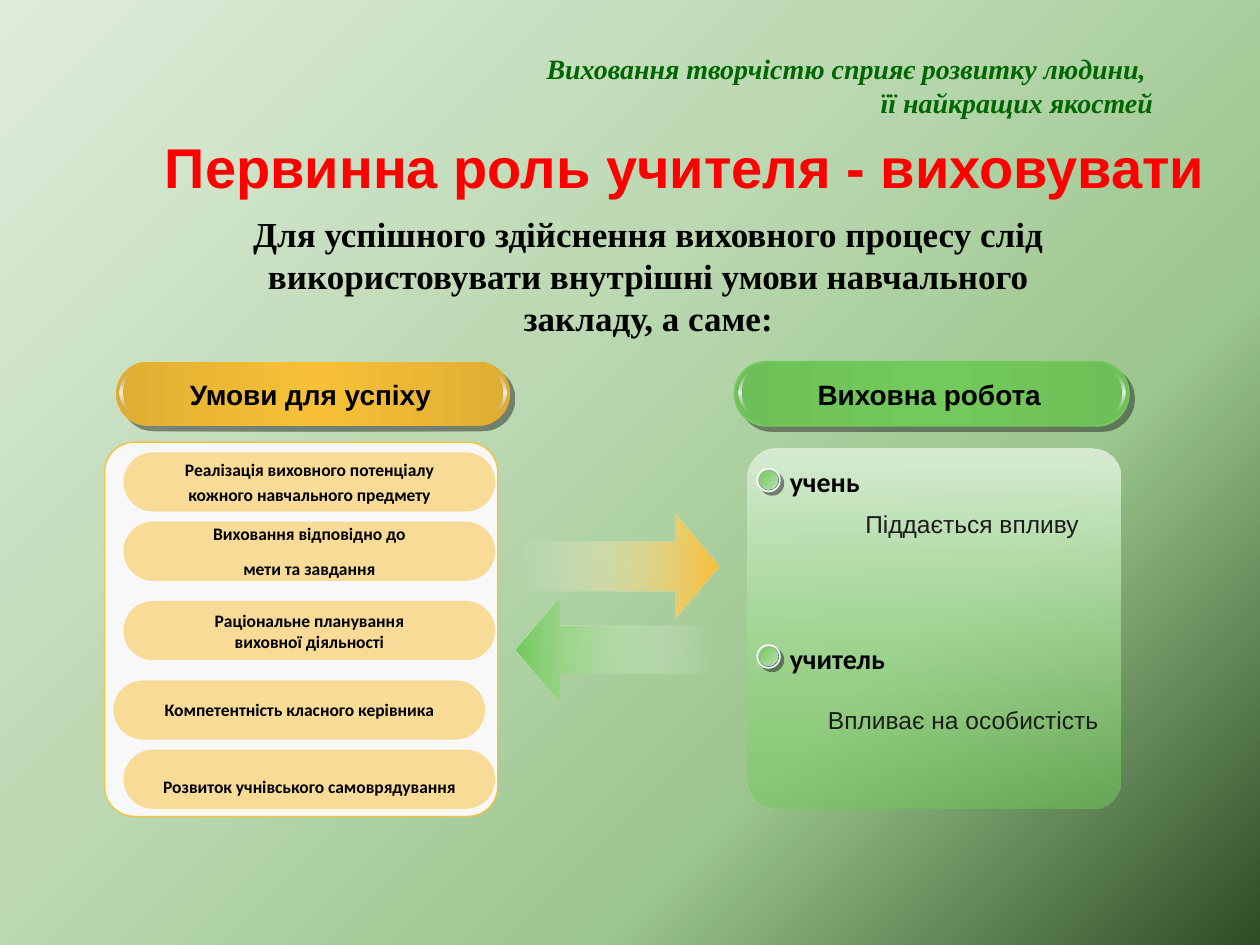
import pptx
import pptx.util
import pptx.dml.color
import pptx.enum.shapes
import pptx.enum.text
import pptx.oxml.ns
from lxml import etree

Inches, Pt = pptx.util.Inches, pptx.util.Pt
RGB = pptx.dml.color.RGBColor
SHAPE = pptx.enum.shapes.MSO_SHAPE
ALIGN = pptx.enum.text.PP_ALIGN
ANCHOR = pptx.enum.text.MSO_ANCHOR
qn = pptx.oxml.ns.qn

BLACK, WHITE = RGB(0, 0, 0), RGB(255, 255, 255)
RED, DARK_GREEN = RGB(0xFF, 0, 0), RGB(0, 0x66, 0)
GOLD, DARK_GOLD = RGB(0xF7, 0xC0, 0x37), RGB(0xDF, 0xAE, 0x32)
GREEN, DEEP_GREEN = RGB(0x73, 0xC9, 0x5B), RGB(0x6D, 0xBF, 0x57)
PALE_GREEN, SOFT_GREEN = RGB(0xD8, 0xEC, 0xD4), RGB(0xB7, 0xDF, 0xB0)
OFF_WHITE, INK = RGB(0xF8, 0xF8, 0xF8), RGB(0x1C, 0x1C, 0x1C)
SILVER, SHADOW = RGB(0xB6, 0xB6, 0xB6), RGB(0x29, 0x29, 0x29)
RIM_LIGHT, RIM_DARK = RGB(0xDD, 0xDD, 0xE1), RGB(0x22, 0x38, 0x64)
BACKGROUND = [(0, RGB(0xDE, 0xEC, 0xD9)), (40, RGB(0xBC, 0xD9, 0xB3)),
              (70, RGB(0x9B, 0xC6, 0x8D)), (100, RGB(0x2E, 0x4C, 0x25))]
GLOSS = [(0, SILVER, 0), (50, WHITE, 84), (100, SILVER, 0)]

# Content
MOTTO = ["Виховання творчістю сприяє розвитку людини, ", "її найкращих якостей"]
TITLE = "Первинна роль учителя - виховувати"
LEAD = ("Для успішного здійснення виховного процесу слід "
        "використовувати внутрішні умови навчального закладу, а саме:")
# heading, left edge, edge colour, middle colour, outline
HEADINGS = [("Умови для успіху", 0.92, DARK_GOLD, GOLD, None),
            ("Виховна робота", 5.83, DEEP_GREEN, GREEN, GREEN)]
# lines, left, top, gap between lines (pt), text drop (pt)
CONDITIONS = [
    (["Реалізація виховного потенціалу", "кожного навчального предмету"], 0.98, 3.59, 2, 0),
    (["Виховання відповідно до", "мети та завдання"], 0.98, 4.14, 8, 0),
    (["Раціональне планування", "виховної діяльності"], 0.98, 4.77, 0, 0),
    (["Компетентність класного керівника"], 0.9, 5.4, 0, 0),
    (["Розвиток учнівського самоврядування"], 0.98, 5.95, 0, 4)]
# role, top, note, note box
ROLES = [("учень", 3.64, "Піддається впливу", (6.34, 3.99, 2.75, 0.33)),
         ("учитель", 5.04, "Впливає на особистість", (6.27, 5.55, 2.75, 0.33))]

HEADING_TOP, HEADING_W, HEADING_H = 2.87, 3.13, 0.51
MOON_W, MOON_H, MOON_INSET = 0.14, 0.35, 0.03
PILL_W, PILL_H = 2.95, 0.47
BULLET_LEFT, BULLET, BULLET_RIM = 6.01, 0.18, 0.015

prs = pptx.Presentation()
prs.slide_width, prs.slide_height = Inches(10), Inches(7.5)
slide = prs.slides.add_slide(prs.slide_layouts[6])


def add_color(parent, color, alpha=100):
    node = etree.SubElement(parent, qn("a:srgbClr"), val=str(color))
    if alpha < 100:
        etree.SubElement(node, qn("a:alpha"), val=str(alpha * 1000))


def paint_gradient(fill, owner, stops, angle):
    fill.gradient()
    gradient = owner.find(".//" + qn("a:gradFill"))
    for child in list(gradient):
        gradient.remove(child)
    stop_list = etree.SubElement(gradient, qn("a:gsLst"))
    for position, *color in stops:
        add_color(etree.SubElement(stop_list, qn("a:gs"), pos=str(position * 1000)), *color)
    etree.SubElement(gradient, qn("a:lin"), ang=str(angle * 60000), scaled="0")


def add_shape(kind, box, fill, angle=0, adjust=(), line=None, shadow=None):
    """fill: a colour, or a list of gradient stops; line: (colour, pt); shadow: (colour, pt)."""
    shape = slide.shapes.add_shape(kind, *map(Inches, box))
    for i, value in enumerate(adjust):
        shape.adjustments[i] = value
    if isinstance(fill, list):
        paint_gradient(shape.fill, shape._element.spPr, fill, angle)
    else:
        shape.fill.solid()
        shape.fill.fore_color.rgb = fill
    if line:
        shape.line.color.rgb, shape.line.width = line[0], Pt(line[1])
    else:
        shape.line.fill.background()
    shape.shadow.inherit = False
    if shadow:
        effects = shape._element.spPr.find(qn("a:effectLst"))
        cast = etree.SubElement(effects, qn("a:outerShdw"), blurRad="0", dist=str(Pt(shadow[1])),
                                dir="2700000", algn="ctr", rotWithShape="0")
        add_color(cast, shadow[0], 50)
    return shape


def write(frame, lines, size, font, color=BLACK, align=ALIGN.CENTER,
          bold=True, italic=False, gap=0):
    for i, line in enumerate(lines):
        paragraph = frame.paragraphs[0] if i == 0 else frame.add_paragraph()
        paragraph.alignment = align
        if i and gap:
            paragraph.space_before = Pt(gap)
        run = paragraph.add_run()
        run.text = line
        run.font.size, run.font.name = Pt(size), font
        run.font.bold, run.font.italic = bold, italic
        run.font.color.rgb = color


def add_text(box, lines, size, font, **style):
    frame = slide.shapes.add_textbox(*map(Inches, box)).text_frame
    frame.word_wrap = True
    write(frame, lines, size, font, **style)


# Background and top texts
paint_gradient(slide.background.fill, slide._element, BACKGROUND, 45)
add_text((3.58, 0.36, 5.67, 0.64), MOTTO, 16, "Times New Roman",
         color=DARK_GREEN, align=ALIGN.RIGHT, italic=True)
add_text((1.21, 1, 8.74, 0.64), [TITLE], 32, "Arial", color=RED, align=ALIGN.LEFT)
add_text((1.85, 1.64, 6.59, 1.11), [LEAD], 20, "Times New Roman")

# Panels
add_shape(SHAPE.ROUNDED_RECTANGLE, (5.93, 3.56, 2.96, 2.86),
          [(0, PALE_GREEN), (100, GREEN, 50)], 90, [0.08])
add_shape(SHAPE.ROUNDED_RECTANGLE, (0.83, 3.51, 3.12, 2.97), OFF_WHITE,
          adjust=[0.08], line=(GOLD, 0.75))

# Glossy headings
for heading, left, edge, middle, outline in HEADINGS:
    add_shape(SHAPE.ROUNDED_RECTANGLE, (left, HEADING_TOP, HEADING_W, HEADING_H),
              [(0, edge), (50, middle), (100, edge)], adjust=[0.5],
              line=outline and (outline, 1), shadow=(SHADOW, 4.2))
    far_side = HEADING_W - MOON_W - MOON_INSET
    for offset, flipped in ((far_side, True), (MOON_INSET, False)):
        moon = add_shape(SHAPE.MOON, (left + offset, HEADING_TOP + 0.07, MOON_W, MOON_H),
                         GLOSS, 90, [0.22])
        if flipped:
            moon._element.spPr.find(qn("a:xfrm")).set("flipH", "1")
    add_text((left + 0.32, HEADING_TOP + 0.08, 2.45, 0.37), [heading], 16, "Arial")

# Arrows between the panels
add_shape(SHAPE.RIGHT_ARROW, (4.12, 4.08, 1.58, 0.83),
          [(0, WHITE, 0), (100, GOLD)], adjust=[0.465, 0.421])
add_shape(SHAPE.LEFT_ARROW, (4.09, 4.74, 1.58, 0.83),
          [(0, GREEN), (100, WHITE, 0)], adjust=[0.465, 0.421])

# Conditions for success
for lines, left, top, gap, drop in CONDITIONS:
    pill = add_shape(SHAPE.ROUNDED_RECTANGLE, (left, top, PILL_W, PILL_H), GOLD, adjust=[0.5])
    pill_color = pill._element.spPr.find(qn("a:solidFill"))[0]
    etree.SubElement(pill_color, qn("a:alpha"), val="50000")
    frame = pill.text_frame
    frame.word_wrap = False
    frame.vertical_anchor = ANCHOR.MIDDLE
    frame.margin_top = Inches(0.05) + Pt(2 * drop)
    write(frame, lines, 10, "Calibri", gap=gap)

# Pupil and teacher
for role, top, note, note_box in ROLES:
    add_text((6.17, top, 1.3, 0.37), [role], 16, "Calibri", align=ALIGN.LEFT)
    add_text(note_box, [note], 14, "Arial", color=INK, bold=False)
    bullet_top = top + 0.08
    add_shape(SHAPE.OVAL, (BULLET_LEFT, bullet_top, BULLET, BULLET),
              [(0, RIM_LIGHT), (100, RIM_DARK)], 45, line=(OFF_WHITE, 1), shadow=(INK, 2.8))
    core = BULLET - 2 * BULLET_RIM
    add_shape(SHAPE.OVAL, (BULLET_LEFT + BULLET_RIM, bullet_top + BULLET_RIM, core, core),
              [(0, GREEN), (100, SOFT_GREEN)], 45)

prs.save("out.pptx")
